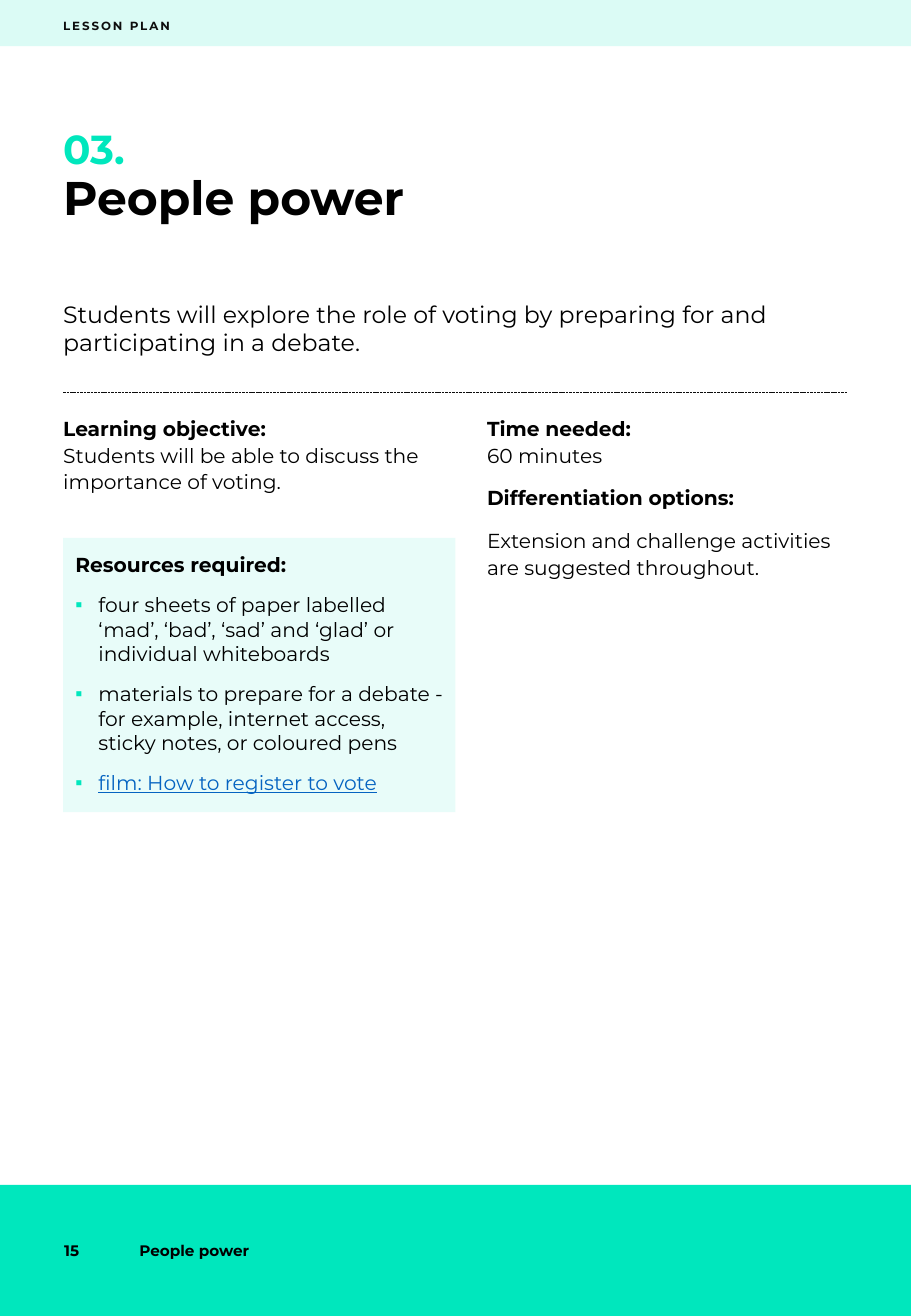
import copy
from dataclasses import dataclass

from lxml import etree
from pptx import Presentation
from pptx.dml.color import RGBColor
from pptx.enum import dml, shapes, text
from pptx.oxml import ns
from pptx.util import Inches, Pt


@dataclass(frozen=True)
class Theme:
    font: str = "Montserrat"
    mint: str = "00E7BD"
    black: str = "000000"
    ink: str = "0D0D0D"
    link: str = "0563C1"
    title: float = 28
    number: float = 24
    intro: float = 14
    body: float = 12
    footer: float = 9
    label: float = 7


THEME = Theme()
TOPIC = "People power"
LABEL = "LESSON PLAN"
NUMBER = "03."
PAGE_NUMBER = "15"
INTRO = "Students will explore the role of voting by preparing for and participating in a debate."
OBJECTIVE = [("Learning objective:", "Students will be able to discuss the importance of voting.")]
DETAILS = [
    ("Time needed:", "60 minutes"),
    ("Differentiation options:", ""),
    ("", "Extension and challenge activities are suggested throughout."),
]
RESOURCES_HEADING = "Resources required:"
RESOURCES = [
    "four sheets of paper labelled ‘mad’, ‘bad’, ‘sad’ and ‘glad’ or individual whiteboards",
    "materials to prepare for a debate - for example, internet access, sticky notes, or coloured pens",
    "film: How to register to vote",
]

PAGE_WIDTH, PAGE_HEIGHT = 7.5, 10.84
MARGIN = 0.52
FULL_WIDTH = 6.46
COLUMN_WIDTH = 2.95
COLUMN_TOP = 3.41
RIGHT_COLUMN = 4.01
HEADER_HEIGHT = 0.38
FOOTER_HEIGHT = 1.08
FOOTER_TOP = PAGE_HEIGHT - FOOTER_HEIGHT
RULE_TOP = 3.23
BULLET_INDENT = 0.19

deck = Presentation()
deck.slide_width, deck.slide_height = Inches(PAGE_WIDTH), Inches(PAGE_HEIGHT)
page = deck.slides.add_slide(deck.slide_layouts[1])


def fill_mint(shape, opacity=100):
    shape.fill.solid()
    shape.fill.fore_color.rgb = RGBColor.from_string(THEME.mint)
    if opacity < 100:
        color = shape.fill._xPr.find(".//" + ns.qn("a:srgbClr"))
        etree.SubElement(color, ns.qn("a:alpha"), val=str(opacity * 1000))


def add_band(top, height, opacity=100):
    band = page.shapes.add_shape(
        shapes.MSO_SHAPE.RECTANGLE, Inches(0), Inches(top), Inches(PAGE_WIDTH), Inches(height))
    band.shadow.inherit = False
    band.line.fill.background()
    fill_mint(band, opacity)


def place(box, left, top, width, height, inset=0, middle=False):
    box.left, box.top, box.width, box.height = map(Inches, (left, top, width, height))
    frame = box.text_frame
    frame.word_wrap = True
    frame.auto_size = text.MSO_AUTO_SIZE.NONE
    frame.vertical_anchor = text.MSO_ANCHOR.MIDDLE if middle else text.MSO_ANCHOR.TOP
    frame.margin_left = frame.margin_right = Inches(inset)
    frame.margin_top = frame.margin_bottom = Inches(inset)
    return frame


def new_frame(*position, **options):
    return place(page.shapes.add_textbox(0, 0, 0, 0), *position, **options)


def style_span(span, size, color, bold):
    span.font.name = THEME.font
    span.font.size = Pt(size)
    span.font.bold = bold
    span.font.color.rgb = RGBColor.from_string(color)


def style(para, size, color=THEME.black, bold=False, spacing=1.0, before=7.5):
    para.alignment = text.PP_ALIGN.LEFT
    para.line_spacing = spacing
    para.space_before, para.space_after = Pt(before), Pt(2)
    for span in para.runs:
        style_span(span, size, color, bold)


def set_bullet(para, shown):
    props = para._p.get_or_add_pPr()
    indent = Inches(BULLET_INDENT) if shown else 0
    props.set("marL", str(indent))
    props.set("indent", str(-indent))
    if shown:
        color = etree.SubElement(props, ns.qn("a:buClr"))
        etree.SubElement(color, ns.qn("a:srgbClr"), val=THEME.mint)
        etree.SubElement(props, ns.qn("a:buChar"), char="▪")
    else:
        etree.SubElement(props, ns.qn("a:buNone"))


def write_line(frame, words, size, **look):
    frame.text = words
    style(frame.paragraphs[0], size, before=0, **look)
    return frame.paragraphs[0].runs[0]


def write_sections(frame, sections):
    for index, (heading, detail) in enumerate(sections):
        para = frame.add_paragraph() if index else frame.paragraphs[0]
        para.text = "\n".join(filter(None, (heading, detail)))
        style(para, THEME.body, spacing=1.1, before=7.5 if index else 0)
        if heading:
            para.runs[0].font.bold = True
        for line_break in para._p.findall(ns.qn("a:br")):
            line_break.append(copy.deepcopy(para.runs[0]._r.get_or_add_rPr()))


def write_resources(box):
    frame = place(box, MARGIN, 4.43, 3.23, 2.26, inset=0.1)
    fill_mint(box, 9)
    frame.text = "\n".join([RESOURCES_HEADING, *RESOURCES])
    heading, *items = frame.paragraphs
    set_bullet(heading, False)
    style(heading, THEME.body, bold=True, spacing=1.1, before=0)
    for item in items:
        set_bullet(item, True)
        style(item, THEME.body)
    film = items[-1].runs[0]
    style_span(film, THEME.body, THEME.link, False)
    film.font.underline = True


def add_rule():
    rule = page.shapes.add_connector(
        shapes.MSO_CONNECTOR.STRAIGHT, Inches(MARGIN), Inches(RULE_TOP),
        Inches(MARGIN + FULL_WIDTH), Inches(RULE_TOP))
    rule.line.color.rgb = RGBColor.from_string(THEME.ink)
    rule.line.width = Pt(0.5)
    rule.line.dash_style = dml.MSO_LINE.SQUARE_DOT
    etree.SubElement(rule._element.spPr, ns.qn("a:effectLst"))


add_band(0, HEADER_HEIGHT, 14)
add_band(FOOTER_TOP, FOOTER_HEIGHT)

label = write_line(
    new_frame(MARGIN, 0.07, 2.7, 0.28, middle=True), LABEL, THEME.label, color=THEME.ink, bold=True)
label._r.get_or_add_rPr().set("spc", "120")
write_line(new_frame(MARGIN, 1.02, FULL_WIDTH, 0.37), NUMBER, THEME.number,
           color=THEME.mint, bold=True)
write_line(place(page.shapes.title, MARGIN, 1.44, FULL_WIDTH, 0.88), TOPIC, THEME.title,
           bold=True, spacing=0.9)
write_line(new_frame(MARGIN, 2.47, FULL_WIDTH, 0.7), INTRO, THEME.intro)

add_rule()
write_sections(new_frame(MARGIN, COLUMN_TOP, COLUMN_WIDTH, 0.77), OBJECTIVE)
write_sections(new_frame(RIGHT_COLUMN, COLUMN_TOP, COLUMN_WIDTH, 6.14), DETAILS)
write_resources(page.placeholders[1])

for words, left, width in [(PAGE_NUMBER, 0.43, 0.62), (TOPIC, 1.05, 2.77)]:
    footer = new_frame(left, FOOTER_TOP, width, FOOTER_HEIGHT, inset=0.1, middle=True)
    write_line(footer, words, THEME.footer, bold=True)

deck.save("out.pptx")
